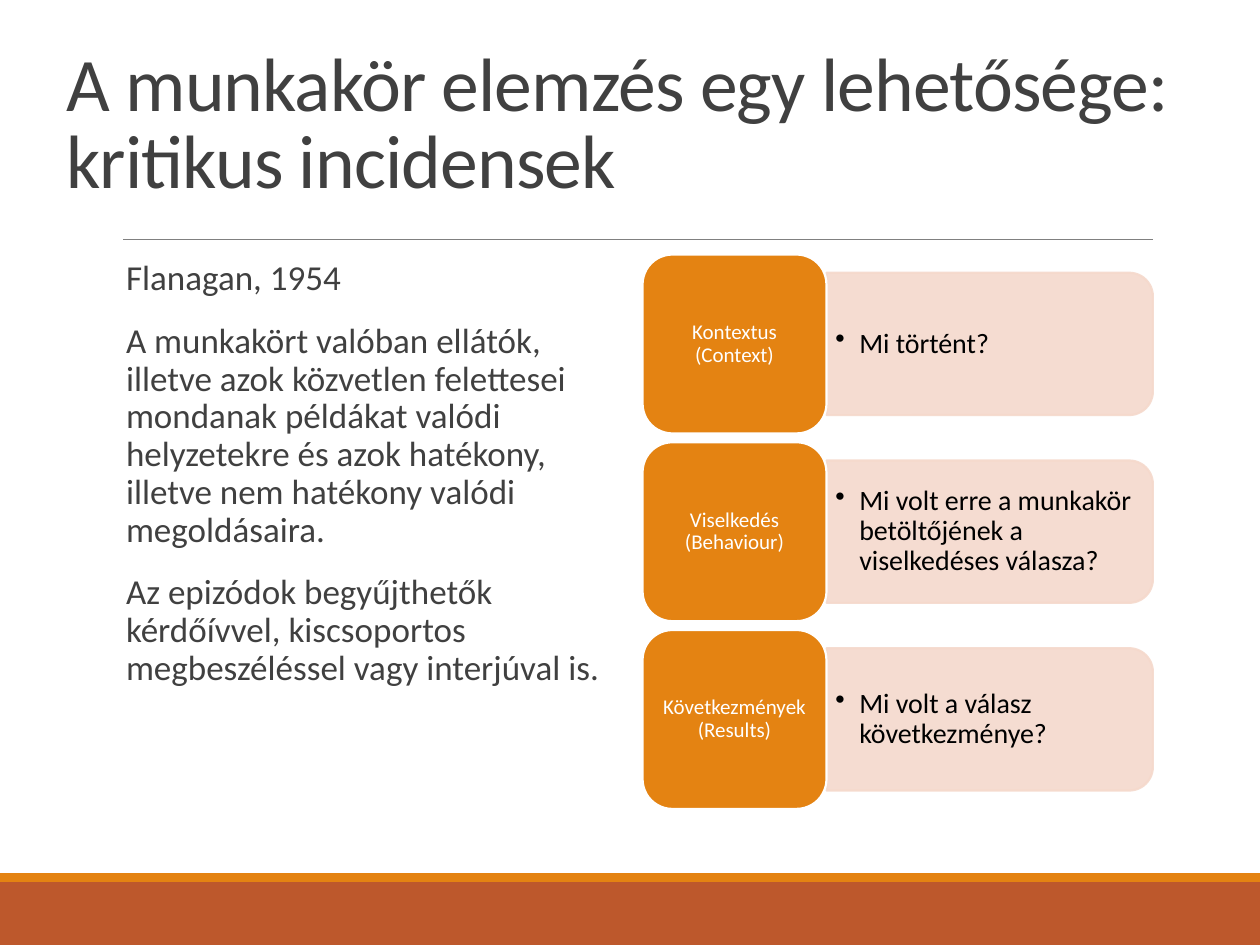
from dataclasses import dataclass

from lxml import etree
from pptx import Presentation, util as u
from pptx.dml.color import RGBColor
from pptx.enum import shapes, text
from pptx.oxml import ns


@dataclass(frozen=True)
class Theme:
    font: str = "Calibri"
    ink: str = "404040"
    rule: str = "808080"
    orange: str = "E48312"
    rust: str = "BD582C"
    blush: str = "F5D9CC"
    white: str = "FFFFFF"
    black: str = "000000"
    title: float = 43.2
    body: float = 20
    answer: float = 16
    label: float = 12


theme = Theme()
deck = Presentation()
deck.slide_width, deck.slide_height = u.Inches(10), u.Inches(7.5)
CELL = deck.slide_width / 100  # square grid: 100 columns by 75 rows
page = deck.slides.add_slide(deck.slide_layouts[6])


def add_block(left, top, width, height, kind=None, fill=None, line=None, opacity=100):
    """Place a preset shape, or a text box when no kind is given, in grid cells."""
    place = [round(cells * CELL) for cells in (left, top, width, height)]
    if kind is None:
        return page.shapes.add_textbox(*place)
    block = page.shapes.add_shape(kind, *place)
    block.shadow.inherit = False
    block.fill.solid()
    block.fill.fore_color.rgb = RGBColor.from_string(fill)
    if line:
        block.line.color.rgb = RGBColor.from_string(line)
        block.line.width = u.Pt(1.25)
    else:
        block.line.fill.background()
    if opacity < 100:
        for color in block._element.spPr.iter(ns.qn("a:srgbClr")):
            etree.SubElement(color, ns.qn("a:alpha"), val=str(opacity * 1000))
    return block


def write(box, *lines, size, color, align=text.PP_ALIGN.LEFT, anchor=text.MSO_ANCHOR.TOP,
          inset=(0.1, 0.05), spacing=0.9, before=0, after=0, indent=0, bullet=None, tracking=0):
    frame = box.text_frame
    frame.word_wrap = True
    frame.vertical_anchor = anchor
    frame.margin_left = frame.margin_right = u.Inches(inset[0])
    frame.margin_top = frame.margin_bottom = u.Inches(inset[1])
    for index, line in enumerate(lines):
        para = frame.add_paragraph() if index else frame.paragraphs[0]
        para.alignment, para.line_spacing = align, spacing
        para.space_before, para.space_after = u.Pt(before), u.Pt(after)
        props = para._p.get_or_add_pPr()
        props.set("marL", str(u.Inches(indent)))
        if bullet:
            props.set("indent", str(-u.Inches(indent)))
            etree.SubElement(props, ns.qn("a:buChar"), char=bullet)
        span = para.add_run()
        span.text = line
        span.font.name, span.font.size = theme.font, u.Pt(size)
        span.font.color.rgb = RGBColor.from_string(color)
        if tracking:
            span._r.get_or_add_rPr().set("spc", str(round(tracking * 100)))


# Footer bands and the rule under the title
add_block(0, 70, 100, 5, shapes.MSO_SHAPE.RECTANGLE, theme.rust)
add_block(0, 69.3, 100, 0.7, shapes.MSO_SHAPE.RECTANGLE, theme.orange)
rule = page.shapes.add_connector(
    shapes.MSO_CONNECTOR.STRAIGHT, *(round(cells * CELL) for cells in (9.8, 19, 91.5, 19)))
rule.line.color.rgb = RGBColor.from_string(theme.rule)
rule.line.width = u.Pt(0.5)
etree.SubElement(rule._element.spPr, ns.qn("a:effectLst"))

write(add_block(4.3, 8.4, 93.3, 8.3), "A munkakör elemzés egy lehetősége: kritikus incidensek",
      size=theme.title, color=theme.ink, anchor=text.MSO_ANCHOR.BOTTOM,
      spacing=0.85, tracking=-0.5)

write(add_block(9, 20.2, 40.5, 44),
      "Flanagan, 1954",
      "A munkakört valóban ellátók, illetve azok közvetlen felettesei mondanak példákat "
      "valódi helyzetekre és azok hatékony, illetve nem hatékony valódi megoldásaira.",
      "Az epizódok begyűjthetők kérdőívvel, kiscsoportos megbeszéléssel vagy interjúval is.",
      size=theme.body, color=theme.ink, inset=(0, 0.05), before=12, after=2, indent=0.1)

# One row per step: an orange label and the question it answers
steps = [
    ("Kontextus (Context)", "Mi történt?"),
    ("Viselkedés (Behaviour)", "Mi volt erre a munkakör betöltőjének a viselkedéses válasza?"),
    ("Következmények (Results)", "Mi volt a válasz következménye?"),
]
LEFT, TOP, PITCH = 51, 20.2, 14.9
LABEL_WIDTH, LABEL_HEIGHT = 14.6, 14.2
PANEL_WIDTH, PANEL_HEIGHT = 25.9, 11.3
panel_left = LEFT + LABEL_WIDTH

for row, (label, question) in enumerate(steps):
    top = TOP + row * PITCH
    middle = top + LABEL_HEIGHT / 2
    # The panel is turned a quarter, so its unrotated sides are swapped about its centre
    panel = add_block(panel_left + (PANEL_WIDTH - PANEL_HEIGHT) / 2, middle - PANEL_WIDTH / 2,
                      PANEL_HEIGHT, PANEL_WIDTH, shapes.MSO_SHAPE.ROUND_2_SAME_RECTANGLE,
                      theme.blush, theme.blush, opacity=90)
    panel.rotation = 90
    write(add_block(panel_left, middle - 5.1, 25.4, 10.2), question,
          size=theme.answer, color=theme.black, anchor=text.MSO_ANCHOR.MIDDLE,
          inset=(0.07, 0.03), indent=0.19, bullet="•")
    write(add_block(LEFT, top, LABEL_WIDTH, LABEL_HEIGHT, shapes.MSO_SHAPE.ROUNDED_RECTANGLE,
                    theme.orange, theme.white), label,
          size=theme.label, color=theme.white, align=text.PP_ALIGN.CENTER,
          anchor=text.MSO_ANCHOR.MIDDLE, inset=(0.05, 0.03))

deck.save("out.pptx")
